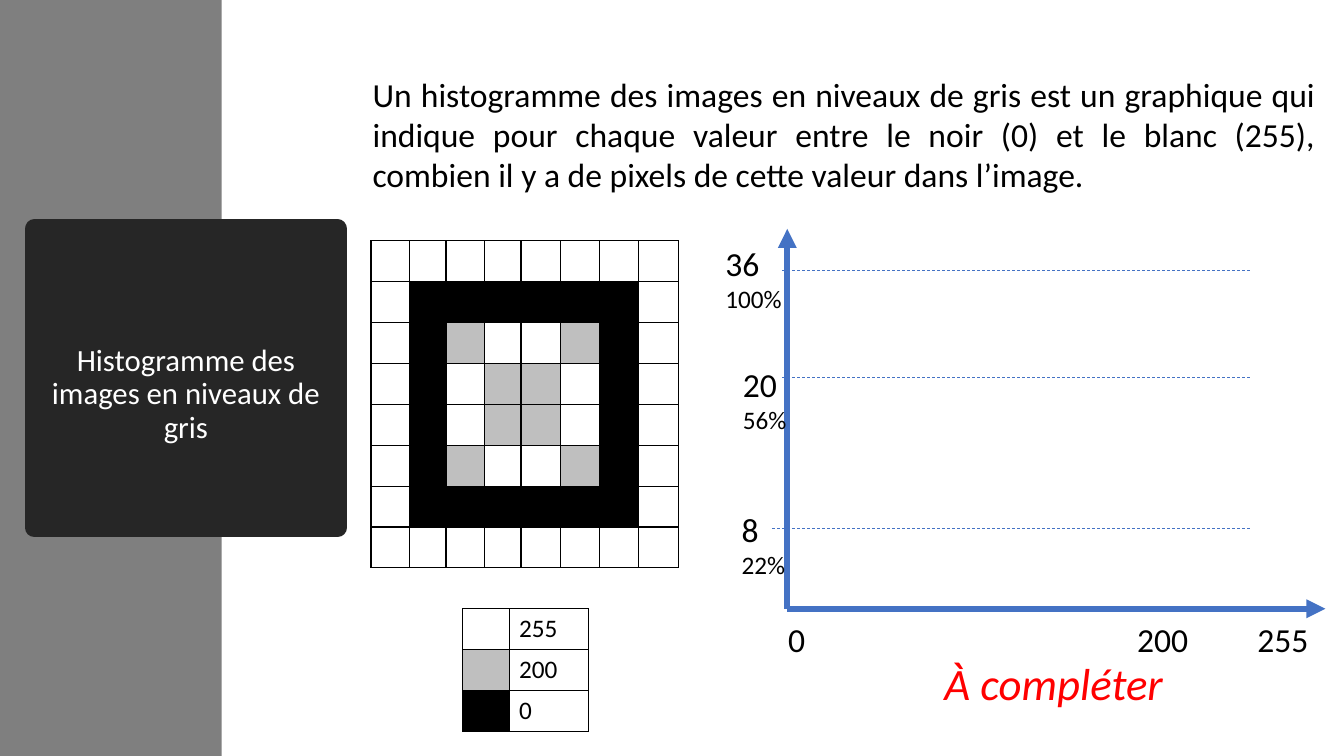
"""Build a slide that explains the histogram of a grey-level image."""
from dataclasses import dataclass

from lxml import etree
from pptx import Presentation
from pptx import util as u
from pptx.dml.color import RGBColor
from pptx.enum import dml, shapes, text
from pptx.oxml import ns


@dataclass(frozen=True)
class Theme:
    font: str = "Calibri"
    black: str = "000000"
    white: str = "FFFFFF"
    band: str = "7F7F7F"
    panel: str = "262626"
    grey: str = "BFBFBF"
    axis: str = "4472C4"
    alert: str = "FF0000"
    small: int = 18
    title: int = 22
    body: int = 24
    call: int = 32


theme = Theme()


def write_text(frame, content, sizes=(theme.body,), color=theme.black,
               align=text.PP_ALIGN.LEFT, italic=False, spacing=1.0, tabs=()):
    for index, line in enumerate(content.split("\n")):
        paragraph = frame.paragraphs[0] if index == 0 else frame.add_paragraph()
        paragraph.text = line
        paragraph.alignment = align
        paragraph.line_spacing = spacing
        if tabs:
            tab_list = etree.SubElement(paragraph._p.get_or_add_pPr(), ns.qn("a:tabLst"))
            for position in tabs:
                etree.SubElement(tab_list, ns.qn("a:tab"), pos=str(u.Cm(position)), algn="l")
        font = paragraph.runs[0].font
        font.name = theme.font
        font.size = u.Pt(sizes[index])
        font.italic = italic
        font.color.rgb = RGBColor.from_string(color)


def draw_line(start, end, width, arrow=False):
    points = [u.Cm(value) for value in (*start, *end)]
    connector = slide.shapes.add_connector(shapes.MSO_CONNECTOR.STRAIGHT, *points)
    connector.line.color.rgb = RGBColor.from_string(theme.axis)
    connector.line.width = u.Pt(width)
    if arrow:
        etree.SubElement(connector.line._get_or_add_ln(), ns.qn("a:tailEnd"), type="triangle")
    else:
        connector.line.dash_style = dml.MSO_LINE.DASH
    etree.SubElement(connector._element.spPr, ns.qn("a:effectLst"))


presentation = Presentation()
presentation.slide_width, presentation.slide_height = u.Cm(33.87), u.Cm(19.05)
slide = presentation.slides.add_slide(presentation.slide_layouts[5])

band = slide.shapes.add_shape(shapes.MSO_SHAPE.RECTANGLE, 0, 0, u.Cm(5.59), u.Cm(19.05))
band.shadow.inherit = False
band.fill.solid()
band.fill.fore_color.rgb = RGBColor.from_string(theme.band)
band.line.fill.background()
slide.shapes._spTree.insert(2, band._element)

title = slide.shapes.title
title.left, title.top, title.width, title.height = map(u.Cm, (0.86, 5.77, 7.65, 7.52))
title.fill.solid()
title.fill.fore_color.rgb = RGBColor.from_string(theme.panel)
title.line.color.rgb = RGBColor.from_string(theme.panel)
title.line.width = u.Pt(13.75)
etree.SubElement(title.line._get_or_add_ln(), ns.qn("a:round"))
title.text_frame.auto_size = text.MSO_AUTO_SIZE.NONE
title.text_frame.vertical_anchor = text.MSO_ANCHOR.MIDDLE
title.text_frame.margin_top = u.Cm(0.97)
write_text(title.text_frame, "Histogramme des images en niveaux de gris", sizes=(theme.title,),
           color=theme.white, align=text.PP_ALIGN.CENTER, spacing=0.9)

pixel_rows = [
    "........",
    ".######.",
    ".#o..o#.",
    ".#.oo.#.",
    ".#.oo.#.",
    ".#o..o#.",
    ".######.",
    "........",
]
pixel_fills = {"#": theme.black, "o": theme.grey}
pixel_widths = [0.97, 0.92, 0.97, 0.92, 0.99, 0.99, 0.99, 0.99]
legend_rows = [(".", "255"), ("o", "200"), ("#", "0")]
row_height = 1.03

for left, top, widths, rows in [
    (9.35, 6.07, pixel_widths, pixel_rows),
    (11.66, 15.34, [1.17, 2.01], legend_rows),
]:
    table = slide.shapes.add_table(len(rows), len(widths), u.Cm(left), u.Cm(top),
                                   u.Cm(sum(widths)), u.Cm(row_height * len(rows))).table
    table.first_row = table.horz_banding = False
    for column, width in zip(table.columns, widths):
        column.width = u.Cm(width)
    for row_index, row in enumerate(rows):
        table.rows[row_index].height = u.Cm(row_height)
        for column_index, value in enumerate(row):
            cell = table.cell(row_index, column_index)
            properties = cell._tc.get_or_add_tcPr()
            for side in ("a:lnL", "a:lnR", "a:lnT", "a:lnB"):
                border = etree.SubElement(properties, ns.qn(side), w=str(u.Pt(1)))
                fill = etree.SubElement(border, ns.qn("a:solidFill"))
                etree.SubElement(fill, ns.qn("a:srgbClr"), val=theme.black)
            if value in pixel_fills:
                cell.fill.solid()
                cell.fill.fore_color.rgb = RGBColor.from_string(pixel_fills[value])
            else:
                cell.fill.background()
            if value.isdigit():
                write_text(cell.text_frame, value, sizes=(theme.small,))

origin = (19.84, 15.34)
for axis_end in [(19.84, 5.77), (33.4, 15.34)]:
    draw_line(origin, axis_end, 4.5, arrow=True)
for start, level in [(19.69, 6.81), (19.69, 9.5), (19.46, 13.31)]:
    draw_line((31.5, level), (start, level), 0.5)

definition = ("Un histogramme des images en niveaux de gris est un graphique qui indique "
              "pour chaque valeur entre le noir (0) et le blanc (255), combien il y a de "
              "pixels de cette valeur dans l’image.")
justified = {"align": text.PP_ALIGN.JUSTIFY}
tick = {"sizes": (theme.body, theme.small), **justified}
for box, content, style in [
    ((9.14, 1.73, 24.26, 3.33), definition, justified),
    ((18.03, 5.99, 2.44, 2.06), "36\n100%", tick),
    ((18.47, 9.04, 2.03, 2.06), "20\n56%", tick),
    ((18.44, 12.7, 2.03, 2.06), "8\n22%", tick),
    ((19.61, 15.47, 13.74, 1.27), "0\t200\t255", {"tabs": (8.8, 11.83)}),
    ((23.55, 16.41, 6.17, 1.63), "À compléter",
     {"sizes": (theme.call,), "color": theme.alert, "italic": True}),
]:
    text_box = slide.shapes.add_textbox(*map(u.Cm, box))
    text_box.text_frame.word_wrap = True
    write_text(text_box.text_frame, content, **style)

presentation.save("out.pptx")
